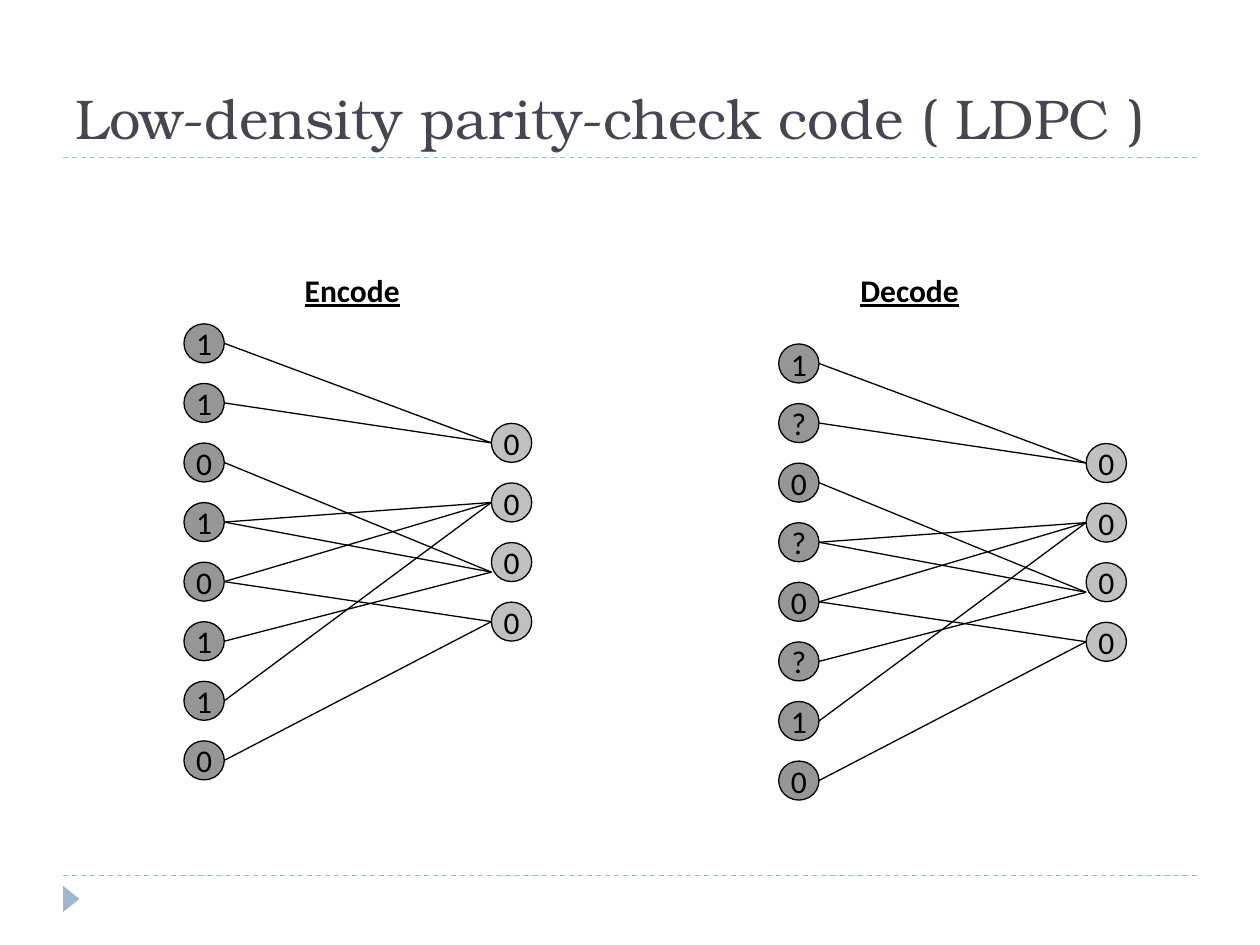
"""Build a slide showing the encode and decode graphs of an LDPC code."""
from dataclasses import dataclass
from typing import Any

import pptx
import pptx.dml.color
import pptx.enum.dml
import pptx.enum.shapes
import pptx.enum.text
import pptx.oxml
import pptx.util
from pptx.util import Inches

NODE_WIDTH, NODE_HEIGHT = 0.32, 0.31
NODE_PITCH = 3.31 / 7
CHECK_OFFSET_X, CHECK_OFFSET_Y = 2.44, 0.79
THIRD_CHECK_DROP = 0.08
EDGES = [(0, 0), (1, 0), (4, 1), (3, 1), (6, 1), (7, 3), (4, 3), (5, 2), (2, 2), (3, 2)]
BLACK, ACCENT = "000000", "9FB8CD"
BODY_FONT = {"name": "Calibri", "size": pptx.util.Pt(18)}
LABEL_FONT = {**BODY_FONT, "bold": True, "underline": True}
TITLE_FONT = {"name": "TeX Gyre Bonum", "size": pptx.util.Pt(32)}


@dataclass
class Graph:
    """A labelled graph of message bits and check bits."""

    label: str
    label_left: float
    left: float
    top: float
    bits: str
    checks: str = "0000"


GRAPHS = [
    Graph("Encode", 2.32, 1.46, 2.57, "11010110"),
    Graph("Decode", 6.73, 6.18, 2.73, "1?0?0?10"),
]


def set_color(color_format: Any, value: str) -> None:
    """Give a fill or font colour format a hex colour."""
    color_format.rgb = pptx.dml.color.RGBColor.from_string(value)


def set_values(target: Any, values: dict[str, Any]) -> None:
    """Set several attributes of an object."""
    for name, value in values.items():
        setattr(target, name, value)


def write_text(shape: Any, text: str, font: dict[str, Any], color: str, **frame: Any) -> Any:
    """Write one formatted paragraph into a shape and return the paragraph."""
    set_values(shape.text_frame, frame)
    paragraph = shape.text_frame.paragraphs[0]
    run = paragraph.add_run()
    run.text = text
    set_values(run.font, font)
    set_color(run.font.color, color)
    return paragraph


def add_line(slide: Any, start: tuple[float, float], end: tuple[float, float], color: str) -> Any:
    """Draw a thin straight line between two points."""
    points = [Inches(value) for value in (*start, *end)]
    line = slide.shapes.add_connector(pptx.enum.shapes.MSO_CONNECTOR.STRAIGHT, *points)
    set_color(line.line.fill.fore_color if line.line.fill.solid() else line.line.color, color)
    line.line.width = pptx.util.Pt(0.75)
    effects = pptx.oxml.parse_xml(
        '<a:effectLst xmlns:a="http://schemas.openxmlformats.org/drawingml/2006/main"/>'
    )
    line._element.spPr.append(effects)
    return line


def add_filled_shape(slide: Any, kind: Any, box: tuple[float, ...], color: str) -> Any:
    """Add a preset shape with a solid fill and no shadow."""
    shape = slide.shapes.add_shape(kind, *[Inches(value) for value in box])
    shape.shadow.inherit = False
    shape.fill.solid()
    set_color(shape.fill.fore_color, color)
    return shape


def add_nodes(slide: Any, left: float, top: float, values: str, color: str) -> None:
    """Draw a column of circles, one for each character."""
    for row, value in enumerate(values):
        box = (left, top + row * NODE_PITCH, NODE_WIDTH, NODE_HEIGHT)
        node = add_filled_shape(slide, pptx.enum.shapes.MSO_SHAPE.OVAL, box, color)
        set_color(node.line.color, BLACK)
        node.line.width = pptx.util.Pt(0.75)
        paragraph = write_text(
            node, value, BODY_FONT, BLACK,
            word_wrap=False, vertical_anchor=pptx.enum.text.MSO_ANCHOR.MIDDLE,
        )
        paragraph.alignment = pptx.enum.text.PP_ALIGN.CENTER


def add_graph(slide: Any, graph: Graph) -> None:
    """Draw one graph with its label, nodes and edges."""
    check_left = graph.left + CHECK_OFFSET_X
    check_top = graph.top + CHECK_OFFSET_Y
    add_nodes(slide, graph.left, graph.top, graph.bits, "969696")
    add_nodes(slide, check_left, check_top, graph.checks, "C0C0C0")
    for bit, check in EDGES:
        start_y = graph.top + bit * NODE_PITCH + NODE_HEIGHT / 2
        end_y = check_top + check * NODE_PITCH + NODE_HEIGHT / 2
        if check == 2:
            end_y += THIRD_CHECK_DROP
        add_line(slide, (graph.left + NODE_WIDTH, start_y), (check_left, end_y), BLACK)
    label = slide.shapes.add_textbox(
        Inches(graph.label_left), Inches(2.1), Inches(1.18), Inches(0.4)
    )
    write_text(label, graph.label, LABEL_FONT, BLACK, word_wrap=True)


def add_frame(slide: Any) -> None:
    """Draw the dashed rules, the corner triangle and the title."""
    for y in (6.95, 1.25):
        rule = add_line(slide, (0.5, y), (9.5, y), ACCENT)
        rule.line.dash_style = pptx.enum.dml.MSO_LINE.DASH
    triangle = add_filled_shape(
        slide, pptx.enum.shapes.MSO_SHAPE.ISOSCELES_TRIANGLE, (0.46, 7.07, 0.21, 0.13), ACCENT
    )
    triangle.rotation = 90
    triangle.line.fill.background()
    title = slide.shapes.title
    set_values(title, {
        "left": Inches(0.5), "top": Inches(0.17), "width": Inches(9), "height": Inches(1.08),
    })
    paragraph = write_text(
        title, "Low-density parity-check code ( LDPC )", TITLE_FONT, "464653",
        word_wrap=True, auto_size=pptx.enum.text.MSO_AUTO_SIZE.NONE,
        vertical_anchor=pptx.enum.text.MSO_ANCHOR.BOTTOM,
    )
    paragraph.alignment = pptx.enum.text.PP_ALIGN.LEFT


def main() -> None:
    """Create the presentation and save it."""
    presentation = pptx.Presentation()
    presentation.slide_width, presentation.slide_height = Inches(10), Inches(7.5)
    slide = presentation.slides.add_slide(presentation.slide_layouts[5])
    add_frame(slide)
    for graph in GRAPHS:
        add_graph(slide, graph)
    presentation.save("out.pptx")


if __name__ == "__main__":
    main()
